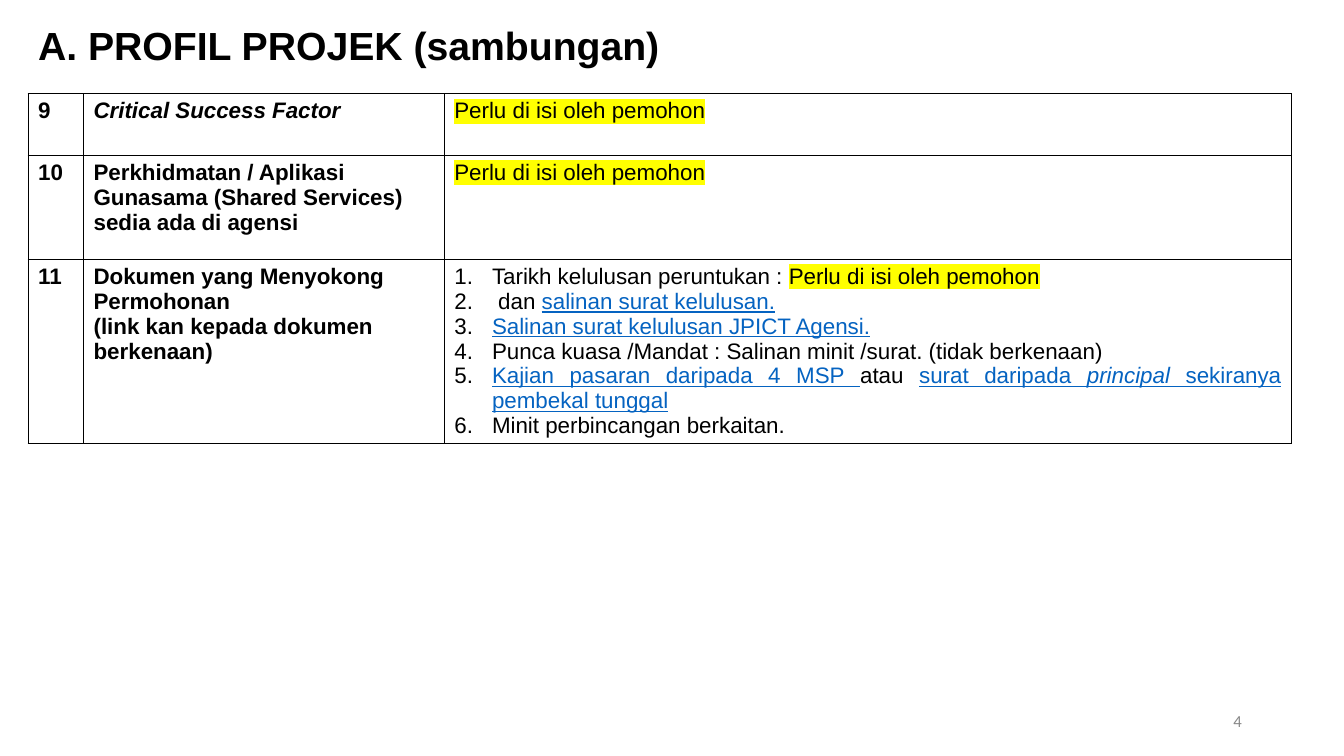
from lxml import etree
from pptx import Presentation
from pptx.dml.color import RGBColor
from pptx.enum.text import MSO_ANCHOR, MSO_AUTO_SIZE, PP_ALIGN
from pptx.oxml.ns import qn
from pptx.util import Cm, Pt

TOP, MIDDLE = MSO_ANCHOR.TOP, MSO_ANCHOR.MIDDLE
NO_AUTOFIT = MSO_AUTO_SIZE.NONE
LEFT, RIGHT, JUSTIFY = PP_ALIGN.LEFT, PP_ALIGN.RIGHT, PP_ALIGN.JUSTIFY

BLACK = RGBColor(0x00, 0x00, 0x00)
GREY = RGBColor(0x88, 0x88, 0x88)
LINK_BLUE = RGBColor(0x05, 0x63, 0xC1)
YELLOW = RGBColor(0xFF, 0xFF, 0x00)

INSET_X, INSET_Y = Cm(0.25), Cm(0.13)
HANGING = Cm(0.95)
COLUMN_WIDTHS = (Cm(1.4), Cm(9.09), Cm(21.34))
ROW_HEIGHTS = (Cm(1.55), Cm(2.62), Cm(4.62))

LABEL = {"bold": True}
LABEL_ITALIC = {"bold": True, "italic": True}
PLAIN = {}
LINK = {"color": LINK_BLUE, "underline": True}
LINK_ITALIC = {**LINK, "italic": True}
TO_FILL = ("Perlu di isi oleh pemohon", {"highlight": YELLOW})

SUPPORTING_DOCUMENTS = [
    [("Tarikh kelulusan peruntukan : ", PLAIN), TO_FILL],
    [(" dan ", PLAIN), ("salinan surat kelulusan.", LINK)],
    [("Salinan surat kelulusan JPICT Agensi.", LINK)],
    [("Punca kuasa /Mandat : Salinan minit /surat. (tidak berkenaan)", PLAIN)],
    [("Kajian pasaran daripada 4 MSP ", LINK), ("atau ", PLAIN),
     ("surat daripada ", LINK), ("principal", LINK_ITALIC),
     (" sekiranya pembekal tunggal", LINK)],
    [("Minit perbincangan berkaitan. ", PLAIN)],
]
PROFILE_ROWS = [
    ("9", [[("Critical Success Factor", LABEL_ITALIC)]], [[TO_FILL]]),
    ("10", [[("Perkhidmatan / Aplikasi Gunasama (Shared Services) "
              "sedia ada di agensi", LABEL)]], [[TO_FILL]]),
    ("11", [[("Dokumen yang Menyokong Permohonan", LABEL)],
            [("(link kan kepada dokumen berkenaan)", LABEL)]],
     SUPPORTING_DOCUMENTS),
]


def add_solid_fill(parent, color):
    """Append a solid fill of the given colour to an XML element."""
    fill = etree.SubElement(parent, qn("a:solidFill"))
    etree.SubElement(fill, qn("a:srgbClr"), val=str(color))


def add_run(paragraph, text, size, color=BLACK, bold=False, italic=False,
            underline=False, highlight=None, face="Arial"):
    """Add one formatted run to a paragraph."""
    run = paragraph.add_run()
    run.text = text
    font = run.font
    font.name, font.size = face, Pt(size)
    font.bold, font.italic, font.underline = bold, italic, underline
    font.color.rgb = color
    if highlight is not None:
        properties = run._r.get_or_add_rPr()
        marker = etree.Element(qn("a:highlight"))
        etree.SubElement(marker, qn("a:srgbClr"), val=str(highlight))
        properties.find(qn("a:solidFill")).addnext(marker)


def set_hanging(paragraph):
    """Give a paragraph a hanging indent and return its properties."""
    properties = paragraph._p.get_or_add_pPr()
    properties.set("marL", str(HANGING))
    properties.set("indent", str(-HANGING))
    return properties


def number_paragraph(paragraph):
    """Turn a paragraph into an item of a numbered list."""
    properties = set_hanging(paragraph)
    bullet_color = etree.SubElement(properties, qn("a:buClr"))
    etree.SubElement(bullet_color, qn("a:srgbClr"), val=str(BLACK))
    etree.SubElement(properties, qn("a:buFont"), typeface="Arial")
    etree.SubElement(properties, qn("a:buAutoNum"), type="arabicPeriod")


def set_frame(frame, anchor):
    """Set the insets, wrapping and anchor of a text frame."""
    frame.word_wrap = True
    frame.auto_size = NO_AUTOFIT
    frame.vertical_anchor = anchor
    frame.margin_left = frame.margin_right = INSET_X
    frame.margin_top = frame.margin_bottom = INSET_Y


def draw_borders(cell):
    """Draw a thin black line on all four sides of a cell."""
    properties = cell._tc.get_or_add_tcPr()
    for position, side in enumerate(("a:lnL", "a:lnR", "a:lnT", "a:lnB")):
        line = etree.Element(qn(side), w=str(Pt(1)))
        add_solid_fill(line, BLACK)
        properties.insert(position, line)


def fill_cell(cell, paragraphs, alignment):
    """Write paragraphs into a bordered, unfilled cell."""
    cell.fill.background()
    draw_borders(cell)
    cell.vertical_anchor = TOP
    cell.margin_left = cell.margin_right = INSET_X
    cell.margin_top = cell.margin_bottom = INSET_Y
    frame = cell.text_frame
    for index, runs in enumerate(paragraphs):
        paragraph = frame.add_paragraph() if index else frame.paragraphs[0]
        paragraph.alignment = alignment
        if paragraphs is SUPPORTING_DOCUMENTS:
            number_paragraph(paragraph)
        for text, style in runs:
            add_run(paragraph, text, 16, **style)


def place_title(slide, left, top, width, height):
    """Place the heading in the title placeholder."""
    title = slide.shapes.title
    title.left, title.top, title.width, title.height = left, top, width, height
    set_frame(title.text_frame, TOP)
    heading = title.text_frame.paragraphs[0]
    heading.alignment = LEFT
    set_hanging(heading)
    add_run(heading, "A. PROFIL PROJEK (sambungan)", 28, bold=True)


def place_profile_table(slide, left, top):
    """Place the project profile table at the given corner."""
    table = slide.shapes.add_table(
        len(ROW_HEIGHTS), len(COLUMN_WIDTHS), left, top,
        sum(COLUMN_WIDTHS), sum(ROW_HEIGHTS)).table
    table.first_row = table.horz_banding = False
    for column, width in zip(table.columns, COLUMN_WIDTHS):
        column.width = width
    for row, height, (number, subject, details) in zip(
            table.rows, ROW_HEIGHTS, PROFILE_ROWS):
        row.height = height
        number_cell, subject_cell, details_cell = row.cells
        fill_cell(number_cell, [[(number, LABEL)]], LEFT)
        fill_cell(subject_cell, subject, LEFT)
        fill_cell(details_cell, details, JUSTIFY)


def place_page_number(slide, left, top, width, height):
    """Place the page number in the given box."""
    frame = slide.shapes.add_textbox(left, top, width, height).text_frame
    set_frame(frame, MIDDLE)
    page_number = frame.paragraphs[0]
    page_number.alignment = RIGHT
    add_run(page_number, "4", 12, color=GREY, face="Calibri")


def main():
    """Build the slide and save it."""
    presentation = Presentation()
    presentation.slide_width = Cm(33.87)
    presentation.slide_height = Cm(19.05)
    slide = presentation.slides.add_slide(presentation.slide_layouts[5])
    place_profile_table(slide, Cm(0.71), Cm(2.36))
    place_title(slide, Cm(0.71), Cm(0.41), Cm(27.13), Cm(1.96))
    place_page_number(slide, Cm(23.93), Cm(17.65), Cm(7.62), Cm(1.02))
    presentation.save("out.pptx")


if __name__ == "__main__":
    main()
